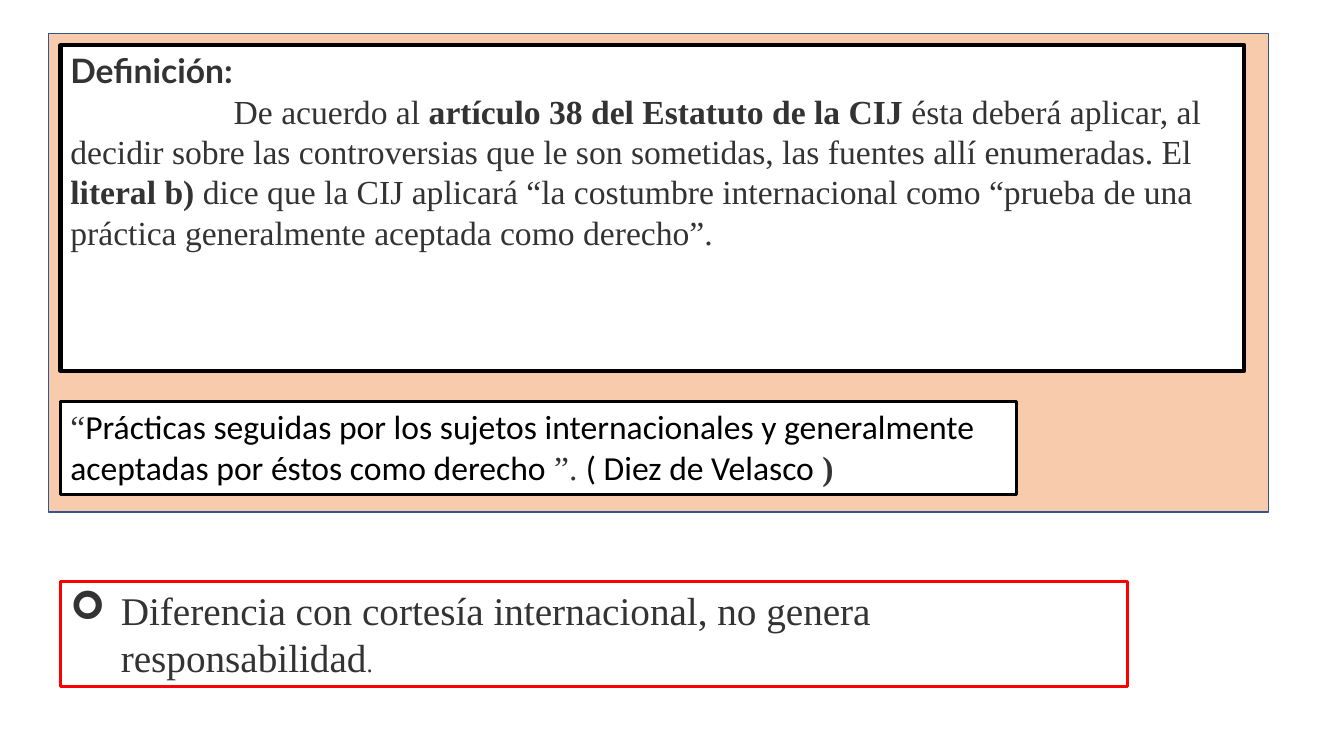
"""Build the slide that defines international custom."""
from pptx import Presentation
from pptx.dml.color import RGBColor
from pptx.enum.shapes import MSO_SHAPE as Shape
from pptx.enum.text import MSO_ANCHOR as Anchor, PP_ALIGN as Align
from pptx.oxml import parse_xml
from pptx.oxml.ns import nsdecls
from pptx.util import Inches, Pt

COLORS = {"peach": "F8CBAD", "blue": "325491", "white": "FFFFFF",
          "black": "000000", "red": "FF0000", "gray": "333333"}

STYLES = {
    "heading": ("Lato", 24, True, "gray"),
    "body": ("Times New Roman", 24, False, "gray"),
    "strong": ("Times New Roman", 24, True, "gray"),
    "quote": ("Calibri", 24, False, "black"),
    "point": ("Times New Roman", 28, False, "gray"),
    "stop": ("Times New Roman", 18, False, "gray"),
}

DEFINITION = [
    {"spans": [("heading", "Definición:")]},
    {"first": 1.62, "spans": [
        ("body", "De acuerdo al "),
        ("strong", "artículo 38 del Estatuto de la CIJ "),
        ("body", "ésta deberá aplicar, al decidir sobre las controversias que "
                 "le son sometidas, las fuentes allí enumeradas. El "),
        ("strong", "literal b) "),
        ("body", "dice que la CIJ aplicará “la costumbre internacional como "
                 "“prueba de una práctica generalmente aceptada como derecho”."),
    ]},
]
QUOTE = [{"spans": [
    ("body", "“"),
    ("quote", "Prácticas seguidas por los sujetos internacionales y "
              "generalmente aceptadas por éstos como derecho"),
    ("body", " ”. "),
    ("quote", "( Diez de Velasco"),
    ("strong", " )"),
]}]
DIFFERENCE = [{"left": 0.5, "first": -0.5, "bullet": "➢", "spans": [
    ("point", "Diferencia con cortesía internacional, no genera responsabilidad"),
    ("stop", "."),
]}]

LEFT = 0.6
BOXES = [
    ((0.48, 0.33, 12.1, 4.75), "peach", "blue", 1, []),
    ((LEFT, 0.45, 11.74, 3.23), "white", "black", 3, DEFINITION),
    ((LEFT, 5.77, 10.58, 1.04), None, "red", 2.25, DIFFERENCE),
    ((LEFT, 3.98, 9.48, 0.93), "white", "black", 2.25, QUOTE),
]


def color(name):
    return RGBColor.from_string(COLORS[name])


def write(para, content):
    para.alignment = Align.LEFT
    layout = para._p.get_or_add_pPr()
    for name, key in {"marL": "left", "indent": "first"}.items():
        layout.set(name, str(Inches(content.get(key, 0))))
    if "bullet" in content:
        layout.append(parse_xml(f'<a:buFont {nsdecls("a")} typeface="Wingdings"/>'))
        layout.append(parse_xml(
            f'<a:buChar {nsdecls("a")} char="{content["bullet"]}"/>'))
    for style, text in content["spans"]:
        span = para.add_run()
        span.text = text
        family, size, bold, tone = STYLES[style]
        for name, value in {"name": family, "size": Pt(size), "bold": bold}.items():
            setattr(span.font, name, value)
        span.font.color.rgb = color(tone)


def add_box(page, place, fill, line, width, content):
    box = page.shapes.add_shape(Shape.RECTANGLE, *map(Inches, place))
    box.shadow.inherit = False
    if fill:
        box.fill.solid()
        box.fill.fore_color.rgb = color(fill)
    else:
        box.fill.background()
    box.line.color.rgb = color(line)
    box.line.width = Pt(width)
    frame = box.text_frame
    for name, value in {"word_wrap": True, "vertical_anchor": Anchor.TOP}.items():
        setattr(frame, name, value)
    for index, item in enumerate(content):
        write(frame.add_paragraph() if index else frame.paragraphs[0], item)


def main():
    deck = Presentation()
    deck.slide_width, deck.slide_height = Inches(13.33), Inches(7.5)
    page = deck.slides.add_slide(deck.slide_layouts[6])
    for box in BOXES:
        add_box(page, *box)
    deck.save("out.pptx")


if __name__ == "__main__":
    main()
